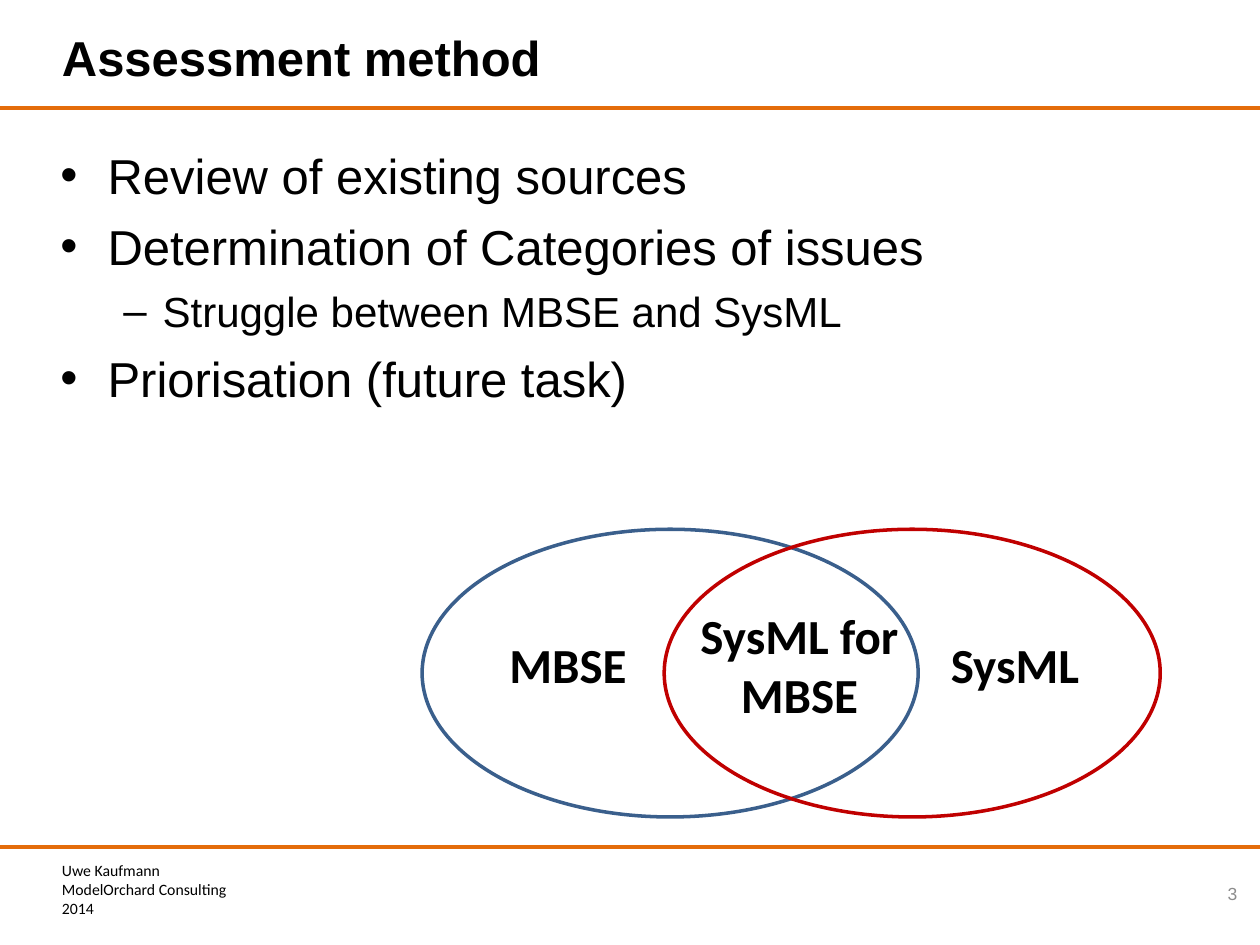
from lxml import etree
from pptx import Presentation
from pptx.dml.color import RGBColor
from pptx.enum.shapes import MSO_CONNECTOR, MSO_SHAPE
from pptx.enum.text import MSO_ANCHOR, PP_ALIGN
from pptx.oxml.ns import qn
from pptx.util import Cm, Pt

LINE = MSO_CONNECTOR.STRAIGHT
ELLIPSE = MSO_SHAPE.OVAL
TOP, MIDDLE = MSO_ANCHOR.TOP, MSO_ANCHOR.MIDDLE
LEFT, CENTER, RIGHT = PP_ALIGN.LEFT, PP_ALIGN.CENTER, PP_ALIGN.RIGHT


def rgb(value):
    return RGBColor.from_string(value)


def add_text(text, x, y, w, h, size=28, font="Arial", color="000000",
             bold=False, align=LEFT, anchor=TOP, wrap=True):
    tf = s.shapes.add_textbox(Cm(x), Cm(y), Cm(w), Cm(h)).text_frame
    tf.word_wrap = wrap
    tf.vertical_anchor = anchor
    for i, line in enumerate(text.split("\n")):
        p = tf.paragraphs[0] if i == 0 else tf.add_paragraph()
        p.alignment = align
        r = p.add_run()
        r.text = line
        r.font.size = Pt(size)
        r.font.name = font
        r.font.bold = bold
        r.font.color.rgb = rgb(color)
    return tf


prs = Presentation()
prs.slide_width, prs.slide_height = Cm(25.4), Cm(19.05)
s = prs.slides.add_slide(prs.slide_layouts[6])

# Rules under the title and above the footer
for y in (2.18, 17.07):
    rule = s.shapes.add_connector(LINE, Cm(0), Cm(y), Cm(25.4), Cm(y))
    rule.line.color.rgb = rgb("E46C0A")
    rule.line.width = Pt(2.25)
    etree.SubElement(rule._element.spPr, qn("a:effectLst"))

# Title
add_text("Assessment method", 1, 0.15, 22.86, 1.98, bold=True, anchor=MIDDLE)

# Bullet list: level, text
items = [
    (0, "Review of existing sources"),
    (0, "Determination of Categories of issues"),
    (1, "Struggle between MBSE and SysML"),
    (0, "Priorisation (future task)"),
]
# Per level: bullet, text indent, hanging indent, size, space before
levels = [("•", 0.95, 0.95, 28, 7), ("–", 2.06, 0.79, 24, 6)]
tf = add_text("\n".join(text for _, text in items), 0.97, 2.8, 22.86, 14.05)
for i, (p, (level, _)) in enumerate(zip(tf.paragraphs, items)):
    bullet, indent, hanging, size, before = levels[level]
    pPr = p._p.get_or_add_pPr()
    pPr.set("marL", str(Cm(indent)))
    pPr.set("indent", str(-Cm(hanging)))
    etree.SubElement(pPr, qn("a:buFont")).set("typeface", "Arial")
    etree.SubElement(pPr, qn("a:buChar")).set("char", bullet)
    p.level = level
    p.space_before = Pt(before if i else 0)
    p.runs[0].font.size = Pt(size)

# Overlapping ellipses
for x, color in ((8.51, "3A5F8C"), (13.39, "C00000")):
    sp = s.shapes.add_shape(ELLIPSE, Cm(x), Cm(10.67), Cm(10), Cm(5.8))
    sp.shadow.inherit = False
    sp.fill.background()
    sp.line.color.rgb = rgb(color)
    sp.line.width = Pt(2)

# Ellipse labels
for text, x, y, w, h in (
    ("MBSE", 10, 12.67, 2.9, 1.45),
    ("SysML for\nMBSE", 13.84, 12.09, 4.55, 2.64),
    ("SysML", 18.9, 12.67, 3.12, 1.45),
):
    add_text(text, x, y, w, h, font="Calibri", bold=True, align=CENTER, wrap=False)

# Footer and slide number
add_text("Uwe Kaufmann\nModelOrchard Consulting\n2014", 1, 17.22, 3.94, 1.42,
         size=9, font="Calibri", wrap=False)
add_text("3", 23.62, 17.5, 1.57, 1.02, size=10, color="8C8C8C",
         align=RIGHT, anchor=MIDDLE)

prs.save("out.pptx")
